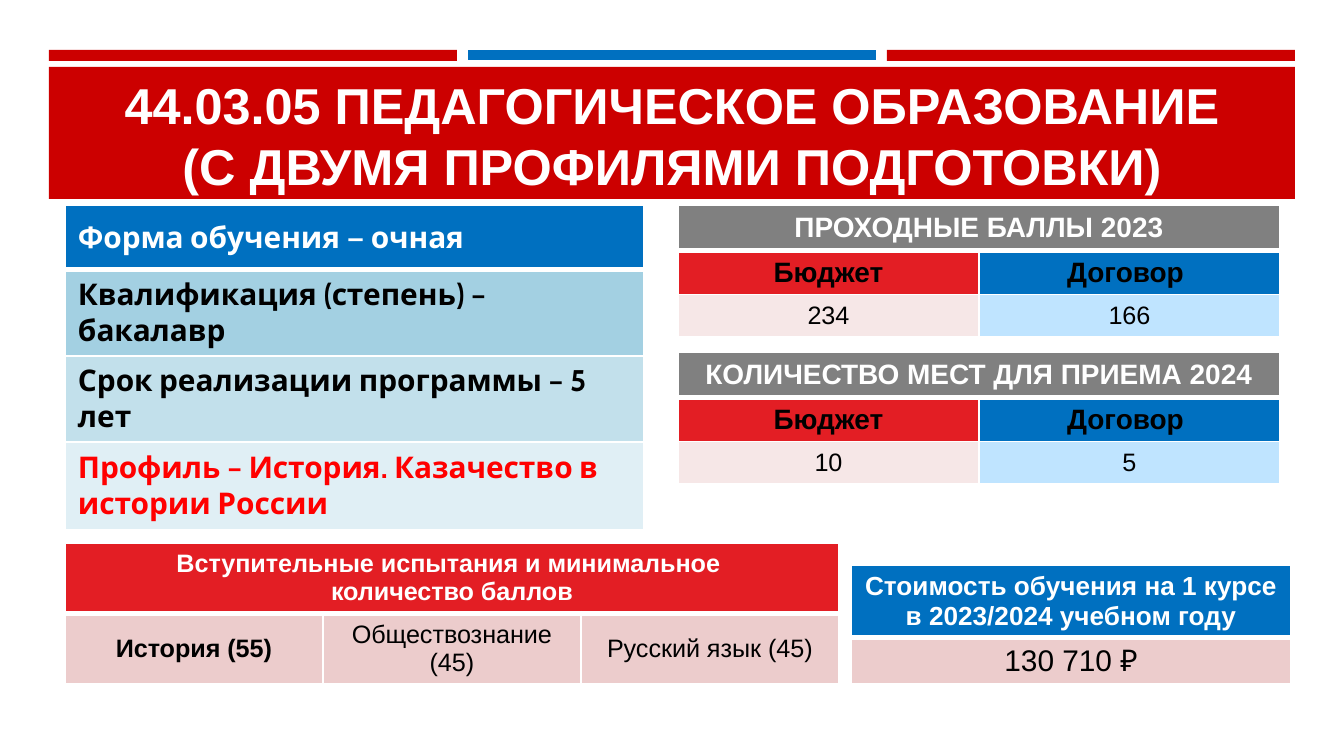
import lxml.etree
import pptx
import pptx.dml.color
import pptx.enum.shapes
import pptx.enum.text
import pptx.oxml.ns
import pptx.util

RGB = pptx.dml.color.RGBColor
WHITE = RGB(0xFF, 0xFF, 0xFF)
BLACK = RGB(0, 0, 0)
BRAND = RGB(0xCC, 0, 0)
RED = RGB(0xE3, 0x1E, 0x24)
ALERT = RGB(0xFF, 0, 0)
BLUE = RGB(0, 0x70, 0xC0)
GRAY = RGB(0x80, 0x80, 0x80)
ROSE = RGB(0xEC, 0xCC, 0xCC)
BLUSH = RGB(0xF6, 0xE7, 0xE7)
SKY = RGB(0xBF, 0xE4, 0xFF)
TEALS = RGB(0xA3, 0xD0, 0xE2), RGB(0xC2, 0xE0, 0xEB), RGB(0xE0, 0xEF, 0xF5)

PX = 914400 / 134.4
CENTER = pptx.enum.text.PP_ALIGN.CENTER
LEFT = pptx.enum.text.PP_ALIGN.LEFT
MIDDLE = pptx.enum.text.MSO_ANCHOR.MIDDLE


def px(*sizes):
    return [pptx.util.Emu(round(size * PX)) for size in sizes]


def write(frame, text, size=15, color=WHITE, bold=True, font="Arial", align=CENTER):
    frame.word_wrap = True
    for num, line in enumerate(text.split("\n")):
        para = frame.add_paragraph() if num else frame.paragraphs[0]
        para.text = line
        para.alignment = align
        for run in para.runs:
            run.font.size = pptx.util.Pt(size)
            run.font.name = font
            run.font.bold = bold
            run.font.color.rgb = color


deck = pptx.Presentation()
deck.slide_width, deck.slide_height = px(1344, 756)
slide = deck.slides.add_slide(deck.slide_layouts[6])

# Header bars and title band
for left, top, width, height, color in [
    (49, 50, 408, 11, BRAND),
    (887, 50, 408, 11, BRAND),
    (468, 50, 408, 10, BLUE),
    (49, 67, 1246, 132, BRAND),
]:
    bar = slide.shapes.add_shape(
        pptx.enum.shapes.MSO_SHAPE.RECTANGLE, *px(left, top, width, height))
    bar.shadow.inherit = False
    bar.fill.solid()
    bar.fill.fore_color.rgb = color
    bar.line.fill.background()

title = slide.shapes.add_textbox(*px(64, 79, 1216, 112)).text_frame
title.vertical_anchor = MIDDLE
write(title, "44.03.05 ПЕДАГОГИЧЕСКОЕ ОБРАЗОВАНИЕ\v(С ДВУМЯ ПРОФИЛЯМИ ПОДГОТОВКИ)", size=27)

# Tables: place, column width, row heights, rows of (text, fill, format);
# a row with a single cell spans all columns
intro = dict(size=16, font="Cabin", align=LEFT)
dark = dict(color=BLACK)
plain = dict(size=13.5, color=BLACK, bold=False)

tables = [
    (65, 205, 579, [65, 86, 86, 88], [
        [("Форма обучения — очная", BLUE, intro)],
        [("Квалификация (степень) – бакалавр", TEALS[0], intro | dark)],
        [("Срок реализации программы – 5 лет", TEALS[1], intro | dark)],
        [("Профиль – История. Казачество в истории России", TEALS[2],
          intro | dict(color=ALERT))],
    ]),
    (65, 543, 258, [69, 69], [
        [("Вступительные испытания и минимальное \nколичество баллов", RED, dict(size=13.5))],
        [("История (55)", ROSE, plain | dict(bold=True)),
         ("Обществознание (45)", ROSE, plain),
         ("Русский язык (45)", ROSE, plain)],
    ]),
    (851, 565, 440, [72, 46], [
        [("Стоимость обучения на 1 курсе \nв 2023/2024 учебном году", BLUE, dict(size=14))],
        [("130 710 ₽", ROSE, plain | dict(size=16))],
    ]),
]
for top, head, budget, paid in [
    (205, "ПРОХОДНЫЕ БАЛЛЫ 2023", "234", "166"),
    (352, "КОЛИЧЕСТВО МЕСТ ДЛЯ ПРИЕМА 2024", "10", "5"),
]:
    tables.append((678, top, 301, [46, 43, 42], [
        [(head, GRAY, {})],
        [("Бюджет", RED, dark), ("Договор ", BLUE, dark)],
        [(budget, BLUSH, plain), (paid, SKY, plain)],
    ]))

for left, top, width, heights, rows in tables:
    count = max(len(row) for row in rows)
    grid = slide.shapes.add_table(
        len(rows), count, *px(left, top, width * count, sum(heights))).table
    grid.first_row = grid.horz_banding = False
    for col in grid.columns:
        col.width = px(width)[0]
    for r, row in enumerate(rows):
        grid.rows[r].height = px(heights[r])[0]
        for c in range(count):
            cell = grid.cell(r, c)
            text, fill, form = row[min(c, len(row) - 1)]
            cell.fill.solid()
            cell.fill.fore_color.rgb = fill
            cell.vertical_anchor = MIDDLE
            cell.margin_left, cell.margin_right, cell.margin_top, cell.margin_bottom = px(13, 13, 5, 5)
            if c < len(row):
                write(cell.text_frame, text, **form)
            # White rules, thicker under the header row
            props = cell._tc.get_or_add_tcPr()
            for spot, side in enumerate("LRTB"):
                thick = (r, side) in [(0, "B"), (1, "T")]
                rule = lxml.etree.Element(
                    pptx.oxml.ns.qn("a:ln" + side), w=str(pptx.util.Pt(3 if thick else 1)))
                paint = lxml.etree.SubElement(rule, pptx.oxml.ns.qn("a:solidFill"))
                lxml.etree.SubElement(paint, pptx.oxml.ns.qn("a:srgbClr"), val=str(WHITE))
                props.insert(spot, rule)
        if len(row) < count:
            grid.cell(r, 0).merge(grid.cell(r, count - 1))

deck.save("out.pptx")
